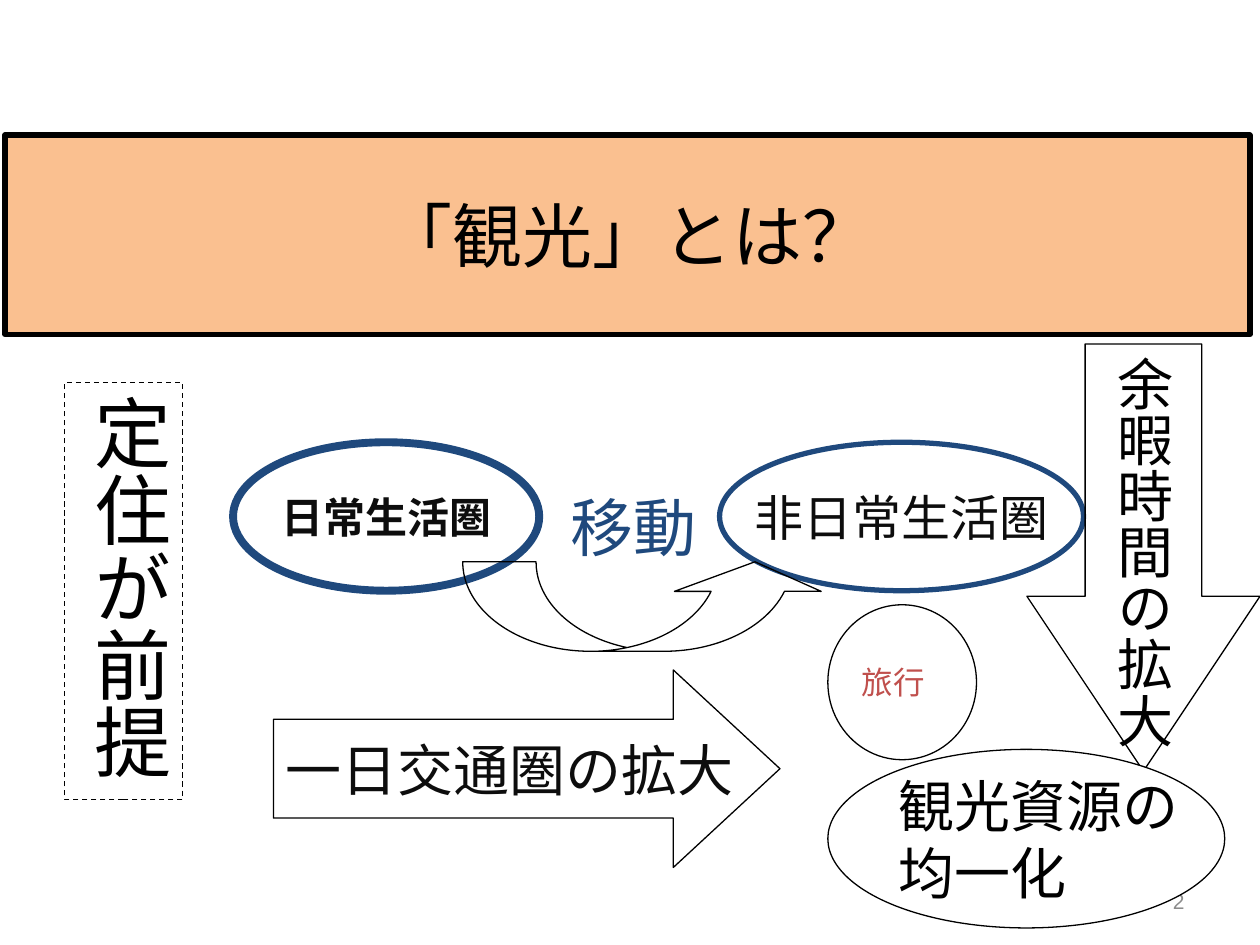
from pptx import Presentation
from pptx.dml.color import RGBColor
from pptx.enum.dml import MSO_LINE
from pptx.enum.shapes import MSO_SHAPE
from pptx.enum.text import MSO_ANCHOR, MSO_AUTO_SIZE, PP_ALIGN
from pptx.util import Inches, Pt

WIDE, HIGH = Inches(10), Inches(7.5)
BLACK, INK, NAVY, RED = "000000", "0D0D0D", "1F497D", "C0504D"
GREY, WHITE, PEACH = "8C8C8C", "FFFFFF", "FAC090"
LEFT, MID, RIGHT = PP_ALIGN.LEFT, PP_ALIGN.CENTER, PP_ALIGN.RIGHT


def hue(code):
    return RGBColor.from_string(code)


def share(x, y, w, h):
    """Turn percentages of the slide into lengths."""
    return [int(part * full / 100)
            for part, full in zip((x, y, w, h), (WIDE, HIGH, WIDE, HIGH))]


def apply(item, form):
    for name, value in form.items():
        setattr(item, name, value)


def paint(shape, fill=None, line=BLACK, width=0.75, dash=None):
    if fill:
        shape.fill.solid()
        shape.fill.fore_color.rgb = hue(fill)
    else:
        shape.fill.background()
    shape.line.color.rgb = hue(line)
    apply(shape.line, {"width": Pt(width), "dash_style": dash})


def write(shape, text, size, ink=BLACK, align=LEFT, bold=False,
          face="Calibri", upright=False, **form):
    """Fill a text frame; upright sets vertical East Asian text."""
    frame = shape.text_frame
    base = {"text": text, "word_wrap": False,
            "vertical_anchor": MSO_ANCHOR.MIDDLE}
    apply(frame, base | form)
    if upright:
        frame._txBody.bodyPr.set("vert", "eaVert")
    for para in frame.paragraphs:
        para.alignment = align
        for run in para.runs:
            apply(run.font, {"name": face, "size": Pt(size), "bold": bold})
            run.font.color.rgb = hue(ink)


def draw(slide, kind, box, **look):
    shape = slide.shapes.add_shape(kind, *share(*box))
    shape.shadow.inherit = False
    paint(shape, **look)
    return shape


def head(slide, box):
    title = slide.shapes.title
    apply(title, dict(zip(("left", "top", "width", "height"), share(*box))))
    paint(title, PEACH, width=3)
    write(title, "「観光」とは？", 40, align=MID, word_wrap=True)


def oval(slide, box, text, size, look, **form):
    write(draw(slide, MSO_SHAPE.OVAL, box, **look), text, size, **form)


def arrow(slide, kind, box, bends, fill=None):
    shape = draw(slide, kind, box, fill=fill)
    for spot, bend in enumerate(bends):
        shape.adjustments[spot] = bend
    return shape


def label(slide, box, text, size, **form):
    write(slide.shapes.add_textbox(*share(*box)), text, size, **form)


def trip(slide, x, y, w, h):
    """Daily sphere, movement, and the sphere outside daily life."""
    oval(slide, (x, y, w * 0.36, h * 0.71), "日常生活圏", 24,
         {"line": NAVY, "width": 4.5}, ink=INK, align=MID, bold=True)
    oval(slide, (x + w * 0.572, y, w * 0.428, h * 0.71), "非日常生活圏", 28,
         {"line": NAVY, "width": 3}, ink=INK, align=MID)
    curve = arrow(slide, MSO_SHAPE.CURVED_DOWN_ARROW,
                  (x + w * 0.27, y + h * 0.572, w * 0.43, h * 0.428),
                  (0.82, 1.64, 0.33))
    curve._element.spPr.xfrm.set("flipV", "1")
    label(slide, (x + w * 0.382, y + h * 0.193, w * 0.178, h * 0.422),
          "移動", 36, ink=NAVY, vertical_anchor=MSO_ANCHOR.TOP,
          auto_size=MSO_AUTO_SIZE.SHAPE_TO_FIT_TEXT)


def premise(slide, box):
    shape = draw(slide, MSO_SHAPE.RECTANGLE, box, dash=MSO_LINE.DASH)
    write(shape, "定住が前提", 44, upright=True, word_wrap=True,
          vertical_anchor=MSO_ANCHOR.TOP,
          auto_size=MSO_AUTO_SIZE.SHAPE_TO_FIT_TEXT)


def growth(slide):
    """Wider range, more leisure, and where they lead."""
    reach = arrow(slide, MSO_SHAPE.RIGHT_ARROW, (21.7, 70.9, 40.2, 20.9),
                  (0.5, 0.54), WHITE)
    write(reach, "一日交通圏の拡大", 32, ink=INK)
    oval(slide, (65.7, 64, 11.8, 16.4), "旅行", 18, {"fill": WHITE}, ink=RED)
    spare = arrow(slide, MSO_SHAPE.DOWN_ARROW, (81.5, 36.4, 18.5, 45.2),
                  (0.5, 0.75))
    write(spare, "余暇時間の拡大", 32, upright=True)
    oval(slide, (65.7, 79.3, 31.5, 18.9), "観光資源の\n均一化", 32,
         {"fill": WHITE})


def main():
    deck = Presentation()
    apply(deck, {"slide_width": WIDE, "slide_height": HIGH})
    slide = deck.slides.add_slide(deck.slide_layouts[0])
    sub = slide.placeholders[1].element
    sub.getparent().remove(sub)
    label(slide, (71.7, 92.7, 23.3, 5.3), "2", 12, ink=GREY, align=RIGHT,
          face="Arial", word_wrap=True)
    head(slide, (0.4, 14.3, 98.8, 21.1))
    trip(slide, 18.5, 46.8, 67.5, 22.13)
    premise(slide, (5.1, 40.5, 9.4, 44.1))
    growth(slide)
    deck.save("out.pptx")


if __name__ == "__main__":
    main()
